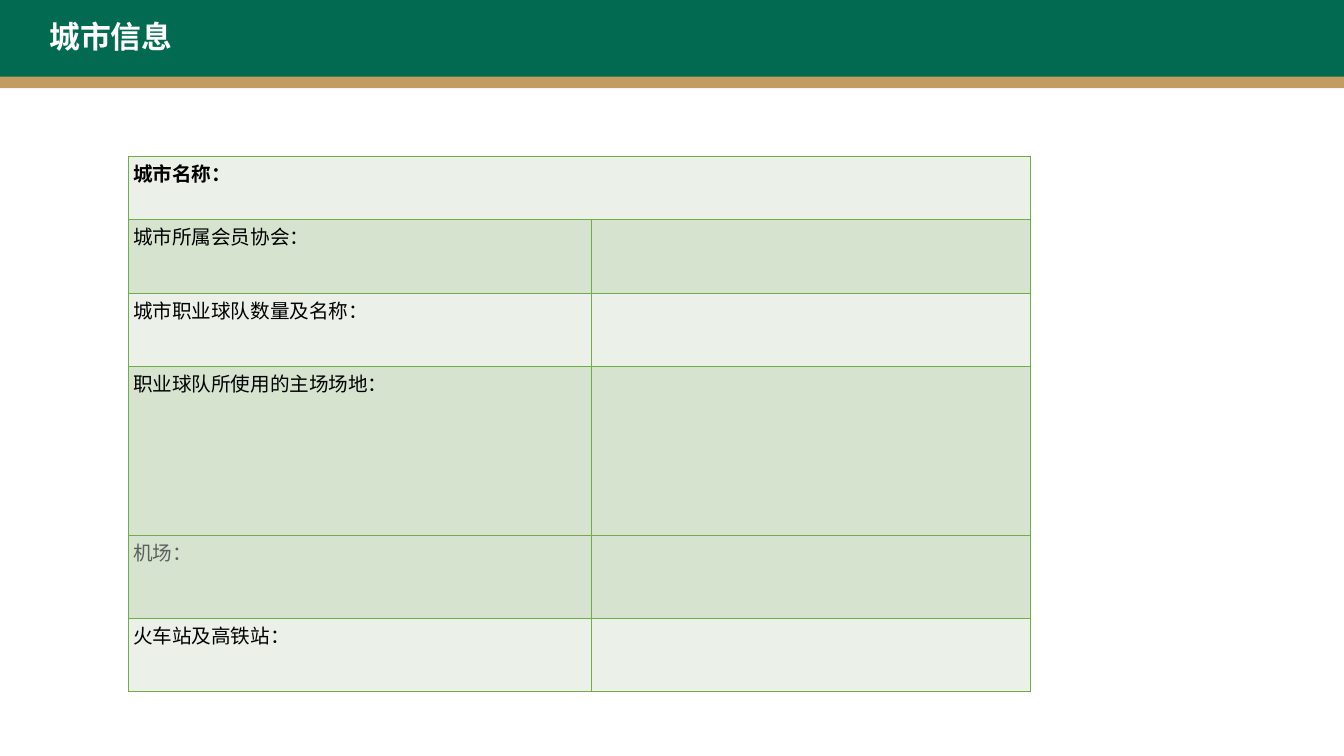
from lxml import etree
from pptx import Presentation
from pptx.dml.color import RGBColor
from pptx.enum.shapes import MSO_SHAPE
from pptx.enum.text import MSO_ANCHOR
from pptx.oxml.ns import qn
from pptx.util import Inches, Pt

RECT = MSO_SHAPE.RECTANGLE
MIDDLE = MSO_ANCHOR.MIDDLE
SANS, SERIF = "Noto Sans CJK SC", "Times New Roman"
BLACK, GREY, WHITE = "000000", "5E5E5E", "FFFFFF"
PALE, SAGE, EDGE = "EBF1E9", "D5E3CF", "70AD47"

TITLE = "城市信息"
BANDS = [(1.28, 0.47, "C39C61"), (0, 1.52, "036A52")]
COLS = [9.19, 8.72]
ROWS = [
    ("城市名称：", 1.26, PALE, SANS, BLACK, True),
    ("城市所属会员协会：", 1.45, SAGE, SANS, BLACK, False),
    ("城市职业球队数量及名称：", 1.45, PALE, SANS, BLACK, False),
    ("职业球队所使用的主场场地：", 3.36, SAGE, SANS, BLACK, False),
    ("机场：", 1.64, SAGE, SERIF, GREY, False),
    ("火车站及高铁站：", 1.45, PALE, SANS, BLACK, False),
]


def paint(fill, color):
    """Fill with a solid colour."""
    fill.solid()
    fill.fore_color.rgb = RGBColor.from_string(color)


def write(frame, text, size, face, color, bold):
    """Add one run of text to the first paragraph."""
    run = frame.paragraphs[0].add_run()
    run.text = text
    font = run.font
    font.size, font.name, font.bold = Pt(size), face, bold
    font.color.rgb = RGBColor.from_string(color)
    etree.SubElement(font._element, qn("a:ea")).set("typeface", SANS)


def border(cell, color):
    """Draw a thin line on each side of a cell."""
    props = cell._tc.get_or_add_tcPr()
    for side in "LRTB":
        line = etree.SubElement(props, qn(f"a:ln{side}"), w=str(Pt(1)))
        fill = etree.SubElement(line, qn("a:solidFill"))
        etree.SubElement(fill, qn("a:srgbClr"), val=color)


def add_head(slide, width):
    """Add the bands and the title."""
    for top, height, color in BANDS:
        band = slide.shapes.add_shape(RECT, 0, Inches(top), width, Inches(height))
        band.shadow.inherit = False
        paint(band.fill, color)
        band.line.fill.background()
    box = slide.shapes.add_textbox(Inches(0.88), Inches(0.3), Inches(4.3), Inches(0.84))
    frame = box.text_frame
    frame.word_wrap = True
    frame.vertical_anchor = MIDDLE
    frame.margin_top = frame.margin_bottom = 0
    write(frame, TITLE, 44, SANS, WHITE, True)


def add_grid(slide):
    """Add the table of city facts."""
    high = sum(row[1] for row in ROWS)
    grid = slide.shapes.add_table(len(ROWS), len(COLS), Inches(2.54), Inches(3.1),
                                  Inches(sum(COLS)), Inches(high)).table
    for col, width in zip(grid.columns, COLS):
        col.width = Inches(width)
    for i, (text, height, shade, face, color, bold) in enumerate(ROWS):
        grid.rows[i].height = Inches(height)
        for cell in grid.rows[i].cells:
            border(cell, EDGE)
            paint(cell.fill, shade)
        write(grid.cell(i, 0).text_frame, text, 28, face, color, bold)
    grid.cell(0, 0).merge(grid.cell(0, 1))


def main():
    """Build and save the slide."""
    deck = Presentation()
    deck.slide_width, deck.slide_height = Inches(26.67), Inches(15)
    slide = deck.slides.add_slide(deck.slide_layouts[6])
    add_head(slide, deck.slide_width)
    add_grid(slide)
    deck.save("out.pptx")


if __name__ == "__main__":
    main()
